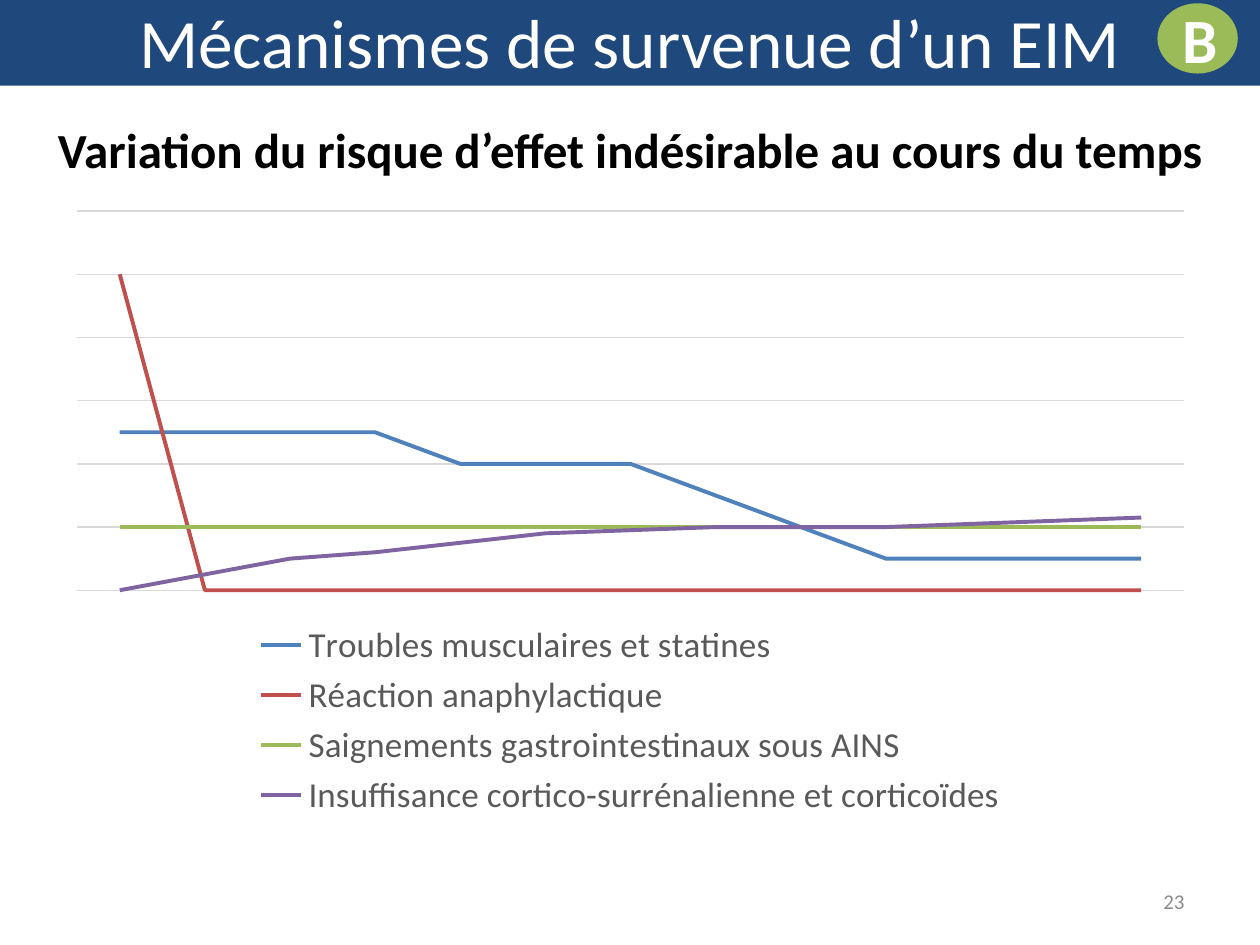
"""Build the slide on how the risk of adverse drug effects varies over time."""
from lxml import etree
from pptx import Presentation
from pptx.chart.data import CategoryChartData
from pptx.dml.color import RGBColor
from pptx.enum.chart import XL_CHART_TYPE, XL_LEGEND_POSITION, XL_MARKER_STYLE
from pptx.enum.shapes import MSO_SHAPE
from pptx.enum.text import MSO_ANCHOR, MSO_AUTO_SIZE, PP_ALIGN
from pptx.oxml.ns import qn
from pptx.util import Inches, Pt

LINE_CHART = XL_CHART_TYPE.LINE
LEGEND_BOTTOM = XL_LEGEND_POSITION.BOTTOM
NO_MARKER = XL_MARKER_STYLE.NONE
OVAL = MSO_SHAPE.OVAL
TOP, MIDDLE = MSO_ANCHOR.TOP, MSO_ANCHOR.MIDDLE
CENTER, RIGHT = PP_ALIGN.CENTER, PP_ALIGN.RIGHT
FIXED_SIZE = MSO_AUTO_SIZE.NONE

FONT = "Calibri"
COLORS = {
    "navy": "1F497D", "blue": "4F81BD", "red": "C0504D", "green": "9BBB59",
    "purple": "8064A2", "grid": "D9D9D9", "legend": "595959",
    "number": "8C8C8C", "black": "000000", "white": "FFFFFF",
}
RISKS = [
    ("Troubles musculaires et statines", "blue",
     [50, 50, 50, 50, 40, 40, 40, 30, 20, 10, 10, 10, 10]),
    ("Réaction anaphylactique", "red", [100] + [0] * 12),
    ("Saignements gastrointestinaux sous AINS", "green", [20] * 13),
    ("Insuffisance cortico-surrénalienne et corticoïdes", "purple",
     [0, 5, 10, 12, 15, 18, 19, 20, 20, 20, 21, 22, 23]),
]


def color(name):
    return RGBColor.from_string(COLORS[name])


def write(holder, text, size, ink, bold=False, align=CENTER, anchor=MIDDLE):
    frame = holder.text_frame
    frame.word_wrap = True
    frame.auto_size = FIXED_SIZE
    frame.vertical_anchor = anchor
    paragraph = frame.paragraphs[0]
    paragraph.alignment = align
    run = paragraph.add_run()
    run.text = text
    run.font.name = FONT
    run.font.size = Pt(size)
    run.font.bold = bold
    run.font.color.rgb = color(ink)


deck = Presentation()
deck.slide_width, deck.slide_height = Inches(10), Inches(7.5)
slide = deck.slides.add_slide(deck.slide_layouts[5])

banner = slide.shapes.title
banner.left, banner.top = Inches(0), Inches(-0.03)
banner.width, banner.height = Inches(10), Inches(0.71)
banner.fill.solid()
banner.fill.fore_color.rgb = color("navy")
write(banner, "Mécanismes de survenue d’un EIM", 39.6, "white")

risk_data = CategoryChartData()
risk_data.categories = [str(period) for period in range(1, 14)]
for label, _, values in RISKS:
    risk_data.add_series(label, values)
risk_chart = slide.shapes.add_chart(
    LINE_CHART, Inches(0.43), Inches(1.57), Inches(9.15), Inches(5.28), risk_data
).chart
risk_chart.has_title = False
risk_chart.font.name = FONT
risk_chart.font.size = Pt(10)
risk_chart.font.color.rgb = color("black")
risk_chart.plots[0].vary_by_categories = False

for series, (_, ink, _) in zip(risk_chart.plots[0].series, RISKS):
    series.smooth = False
    series.marker.style = NO_MARKER
    series.format.line.width = Pt(2.25)
    series.format.line.color.rgb = color(ink)

risk_chart.category_axis.visible = False
risk_axis = risk_chart.value_axis
risk_axis.visible = False
risk_axis.minimum_scale, risk_axis.maximum_scale = 0, 120
risk_axis.major_unit = 20
risk_axis.has_major_gridlines = True
risk_axis.major_gridlines.format.line.width = Pt(0.75)
risk_axis.major_gridlines.format.line.color.rgb = color("grid")

risk_chart.has_legend = True
legend = risk_chart.legend
legend.position = LEGEND_BOTTOM
legend.include_in_layout = False
legend.font.name = FONT
legend.font.size = Pt(20)
legend.font.color.rgb = color("legend")

for area, index, target, bounds in [
    ("plotArea", 0, "inner", (0.02, 0.02, 0.96, 0.57)),
    ("legend", 1, None, (0.17, 0.63, 0.66, 0.31)),
]:
    parent = risk_chart.element.xpath(f".//c:{area}")[0]
    for previous in parent.findall(qn("c:layout")):
        parent.remove(previous)
    layout = etree.Element(qn("c:layout"))
    manual = etree.SubElement(layout, qn("c:manualLayout"))
    settings = [("layoutTarget", target)] if target else []
    settings += [("xMode", "edge"), ("yMode", "edge"), *zip("xywh", bounds)]
    for tag, value in settings:
        etree.SubElement(manual, qn(f"c:{tag}"), val=str(value))
    parent.insert(index, layout)

subtitle = slide.shapes.add_textbox(Inches(0), Inches(0.9), Inches(10), Inches(0.57))
write(subtitle, "Variation du risque d’effet indésirable au cours du temps", 28,
      "black", bold=True, anchor=TOP)

page_number = slide.shapes.add_textbox(
    Inches(7.17), Inches(6.95), Inches(2.33), Inches(0.4))
write(page_number, "23", 12, "number", align=RIGHT)

badge = slide.shapes.add_shape(
    OVAL, Inches(9.2), Inches(0.04), Inches(0.61), Inches(0.53))
badge.shadow.inherit = False
badge.fill.solid()
badge.fill.fore_color.rgb = color("green")
badge.line.color.rgb = color("green")
badge.line.width = Pt(2)
write(badge, "B", 36, "white", bold=True)

deck.save("out.pptx")
